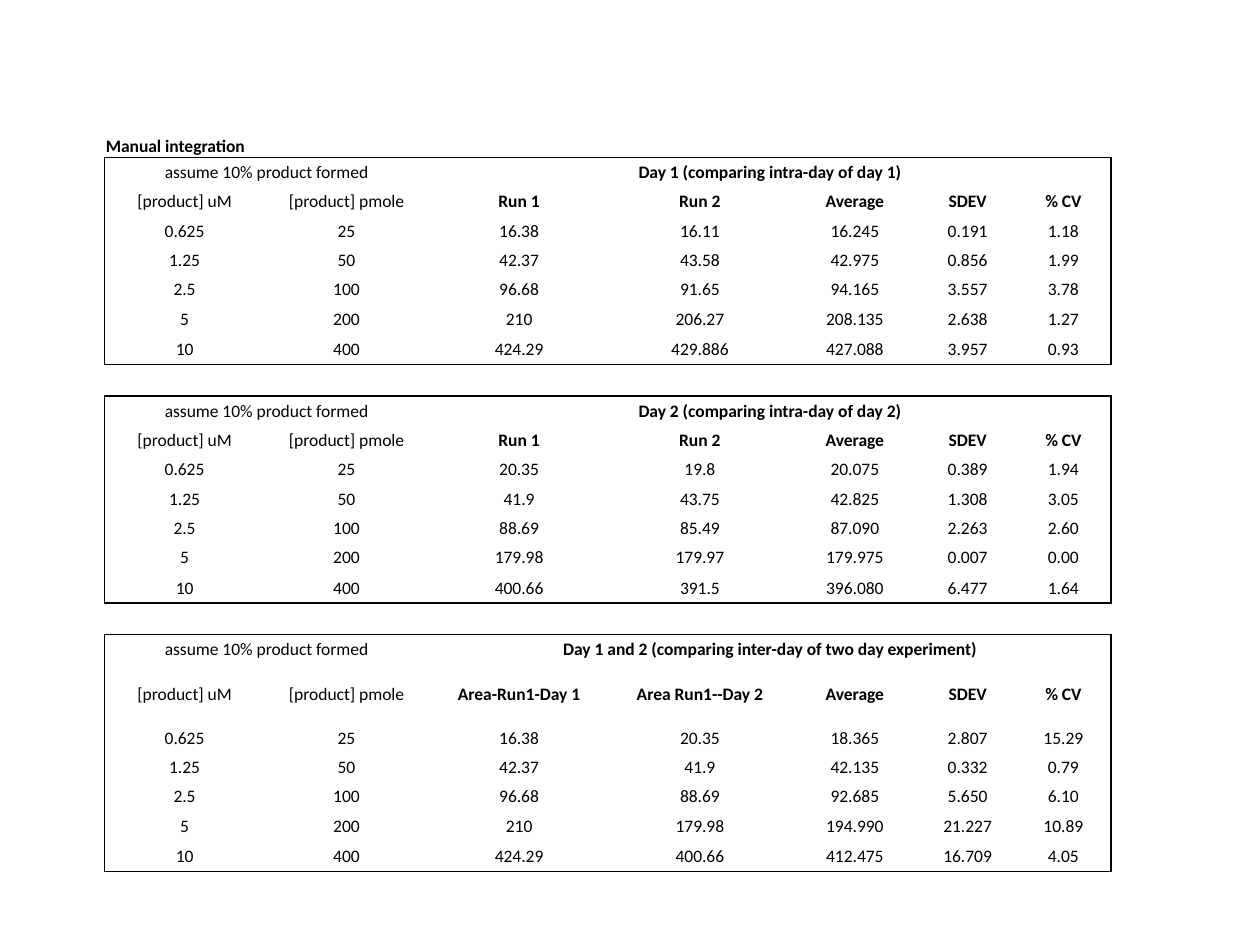
import pptx
import pptx.util
import pptx.dml.color
import pptx.enum.text
import pptx.oxml.ns
import lxml.etree

Inches = pptx.util.Inches
Pt = pptx.util.Pt

THEME = {"font": "Calibri", "size": 10, "ink": "000000", "border": 1}

HEADING = "Manual integration"
ASSUMPTION = "assume 10% product formed"
PRODUCT_HEADS = ["[product] uM", "[product] pmole"]
STATISTIC_HEADS = ["Average", "SDEV", "% CV"]
CONCENTRATIONS = [("0.625", "25"), ("1.25", "50"), ("2.5", "100"), ("5", "200"), ("10", "400")]
EXPERIMENTS = [
    {
        "name": "Day 1 (comparing intra-day of day 1)",
        "runs": ["Run 1", "Run 2"],
        "head_height": None,
        "results": [
            ("16.38", "16.11", "16.245", "0.191", "1.18"),
            ("42.37", "43.58", "42.975", "0.856", "1.99"),
            ("96.68", "91.65", "94.165", "3.557", "3.78"),
            ("210", "206.27", "208.135", "2.638", "1.27"),
            ("424.29", "429.886", "427.088", "3.957", "0.93"),
        ],
    },
    {
        "name": "Day 2 (comparing intra-day of day 2)",
        "runs": ["Run 1", "Run 2"],
        "head_height": None,
        "results": [
            ("20.35", "19.8", "20.075", "0.389", "1.94"),
            ("41.9", "43.75", "42.825", "1.308", "3.05"),
            ("88.69", "85.49", "87.090", "2.263", "2.60"),
            ("179.98", "179.97", "179.975", "0.007", "0.00"),
            ("400.66", "391.5", "396.080", "6.477", "1.64"),
        ],
    },
    {
        "name": "Day 1 and 2 (comparing inter-day of two day experiment)",
        "runs": ["Area-Run1-Day 1", "Area Run1--Day 2"],
        "head_height": 0.47,
        "results": [
            ("16.38", "20.35", "18.365", "2.807", "15.29"),
            ("42.37", "41.9", "42.135", "0.332", "0.79"),
            ("96.68", "88.69", "92.685", "5.650", "6.10"),
            ("210", "179.98", "194.990", "21.227", "10.89"),
            ("424.29", "400.66", "412.475", "16.709", "4.05"),
        ],
    },
]

LEFT, TOP, WIDTH, HEIGHT = 0.83, 1, 8, 5.92
COLUMN_WIDTHS = [1.27, 1.3, 1.44, 1.43, 1.03, 0.76, 0.76]
EDGE_HEIGHT = 0.25
COLUMNS = len(COLUMN_WIDTHS)
PRODUCTS = len(PRODUCT_HEADS)
BLANK_ROW = [""] * COLUMNS


def arrange_rows():
    rows, heights, boxes = [], [], []
    for experiment in EXPERIMENTS:
        rows.append([HEADING if not rows else ""] + BLANK_ROW[1:])
        first = len(rows)
        rows.append([ASSUMPTION, "", experiment["name"]] + BLANK_ROW[3:])
        rows.append(PRODUCT_HEADS + experiment["runs"] + STATISTIC_HEADS)
        for product, result in zip(CONCENTRATIONS, experiment["results"]):
            rows.append([*product, *result])
        inner = [None] * len(CONCENTRATIONS)
        heights += [EDGE_HEIGHT, None, experiment["head_height"], *inner[1:], EDGE_HEIGHT]
        boxes.append((first, len(rows)))
    fixed = sum(height for height in heights if height)
    regular = (HEIGHT - fixed) / heights.count(None)
    return rows, [height or regular for height in heights], boxes


def draw_borders(cell, sides):
    properties = cell._tc.get_or_add_tcPr()
    for position, side in enumerate("LRTB"):
        line = lxml.etree.Element(pptx.oxml.ns.qn("a:ln" + side), w=str(Pt(THEME["border"])))
        if side in sides:
            fill = lxml.etree.SubElement(line, pptx.oxml.ns.qn("a:solidFill"))
            lxml.etree.SubElement(fill, pptx.oxml.ns.qn("a:srgbClr"), val=THEME["ink"])
        else:
            lxml.etree.SubElement(line, pptx.oxml.ns.qn("a:noFill"))
        properties.insert(position, line)


def write_cell(cell, text, bold, centred):
    cell.fill.background()
    cell.margin_left = cell.margin_right = cell.margin_top = Inches(0.01)
    cell.margin_bottom = 0
    anchors = pptx.enum.text.MSO_ANCHOR
    cell.vertical_anchor = anchors.MIDDLE if centred else anchors.BOTTOM
    paragraph = cell.text_frame.paragraphs[0]
    if not text:
        lxml.etree.SubElement(
            paragraph._p, pptx.oxml.ns.qn("a:endParaRPr"), sz=str(THEME["size"] * 100))
        return
    if centred:
        paragraph.alignment = pptx.enum.text.PP_ALIGN.CENTER
    run = paragraph.add_run()
    run.text = text
    run.font.name = THEME["font"]
    run.font.size = Pt(THEME["size"])
    run.font.bold = bold
    run.font.color.rgb = pptx.dml.color.RGBColor.from_string(THEME["ink"])


def border_sides(row, column, boxes):
    rules = {edge for box in boxes for edge in box}
    boxed = any(first <= row < end for first, end in boxes)
    opens_box = any(row == first for first, end in boxes)
    right_columns = (PRODUCTS, COLUMNS - 1) if opens_box else (COLUMNS - 1,)
    tests = {
        "L": boxed and column == 0,
        "R": boxed and column in right_columns,
        "T": row in rules,
        "B": row + 1 in rules,
    }
    return [side for side, drawn in tests.items() if drawn]


def main():
    deck = pptx.Presentation()
    deck.slide_width, deck.slide_height = Inches(10), Inches(7.5)
    slide = deck.slides.add_slide(deck.slide_layouts[6])
    rows, heights, boxes = arrange_rows()
    integration = slide.shapes.add_table(
        len(rows), COLUMNS, Inches(LEFT), Inches(TOP), Inches(WIDTH), Inches(HEIGHT)).table
    integration.first_row = integration.horz_banding = False
    for column, width in zip(integration.columns, COLUMN_WIDTHS):
        column.width = Inches(width)
    for row, height in zip(integration.rows, heights):
        row.height = Inches(height)

    title_rows = [first for first, end in boxes]
    bold_rows = title_rows + [first + 1 for first in title_rows]
    for r, texts in enumerate(rows):
        for c, text in enumerate(texts):
            bold = r == 0 or (r in bold_rows and c >= PRODUCTS)
            cell = integration.cell(r, c)
            write_cell(cell, text, bold, centred=r > 0)
            draw_borders(cell, border_sides(r, c, boxes))

    for r in [0] + title_rows:
        integration.cell(r, 0).merge(integration.cell(r, PRODUCTS - 1))
    for r in title_rows:
        integration.cell(r, PRODUCTS).merge(integration.cell(r, COLUMNS - 1))
    deck.save("out.pptx")


if __name__ == "__main__":
    main()
